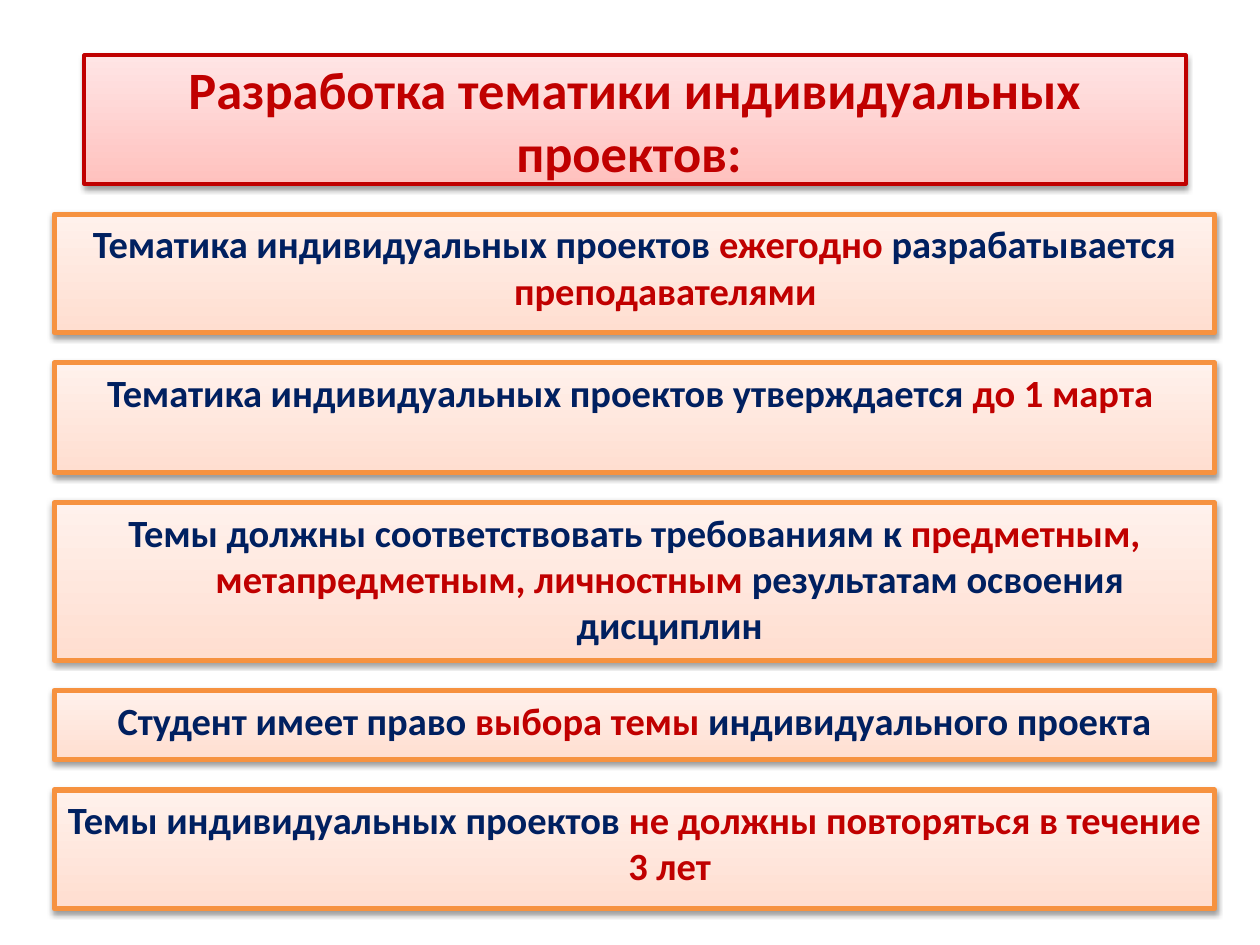
"""Build a slide of framed rules on choosing topics for individual projects."""

from dataclasses import dataclass

import lxml.etree
import pptx
import pptx.dml.color
import pptx.enum.shapes
import pptx.enum.text
import pptx.oxml
import pptx.oxml.ns
import pptx.shapes.autoshape
import pptx.slide
import pptx.util

RGBColor = pptx.dml.color.RGBColor
RED = RGBColor(0xC0, 0x00, 0x00)
NAVY = RGBColor(0x00, 0x20, 0x60)
ORANGE = RGBColor(0xF6, 0x92, 0x40)
PINK_DARK = RGBColor(0xFF, 0xC1, 0xBE)
PINK_LIGHT = RGBColor(0xFF, 0xE5, 0xE5)
PEACH_DARK = RGBColor(0xFF, 0xDE, 0xD0)
PEACH_LIGHT = RGBColor(0xFF, 0xF1, 0xEC)

SLIDE_WIDTH = pptx.util.Inches(10)
SLIDE_HEIGHT = pptx.util.Inches(7.5)
COLUMN = SLIDE_WIDTH / 100
ROW = SLIDE_HEIGHT / 75
FIRST_RULE_TOP = 17
RULE_GAP = 2.4
HANGING_INDENT = pptx.util.Inches(0.56)


@dataclass(frozen=True)
class BoxStyle:
    """Look and horizontal place of one kind of box."""

    left: float
    width: float
    bottom_color: RGBColor
    top_color: RGBColor
    line_color: RGBColor
    line_points: float
    text_points: float
    anchor: pptx.enum.text.MSO_ANCHOR
    hanging: bool


@dataclass(frozen=True)
class Rule:
    """Height in rows and the coloured text pieces of a rule."""

    height: float
    pieces: tuple[tuple[str, RGBColor], ...]


TITLE_STYLE = BoxStyle(6.7, 87.4, PINK_DARK, PINK_LIGHT, RED, 2.25, 30,
                       pptx.enum.text.MSO_ANCHOR.MIDDLE, False)
RULE_STYLE = BoxStyle(4.3, 92.1, PEACH_DARK, PEACH_LIGHT, ORANGE, 3, 22,
                      pptx.enum.text.MSO_ANCHOR.TOP, True)
TITLE = Rule(10.2, (("Разработка тематики индивидуальных проектов: ", RED),))
RULES = (
    Rule(9.4, (("Тематика индивидуальных проектов ", NAVY), ("ежегодно ", RED),
               ("разрабатывается ", NAVY), ("преподавателями ", RED))),
    Rule(8.7, (("Тематика индивидуальных проектов утверждается", NAVY),
               (" до 1 марта ", RED))),
    Rule(12.5, (("Темы должны соответствовать требованиям к ", NAVY),
                ("предметным, метапредметным, личностным", RED),
                (" результатам освоения дисциплин", NAVY))),
    Rule(5.5, (("Студент имеет право ", NAVY), ("выбора темы ", RED),
               ("индивидуального проекта", NAVY))),
    Rule(9.4, (("Темы индивидуальных проектов ", NAVY),
               ("не должны повторяться в течение 3 лет", RED))),
)


def add_shadow(shape: pptx.shapes.autoshape.Shape) -> None:
    """Give the shape a soft shadow falling straight down."""
    shape.shadow.inherit = False
    effects = shape.element.spPr.find(pptx.oxml.ns.qn("a:effectLst"))
    shadow = lxml.etree.SubElement(
        effects, pptx.oxml.ns.qn("a:outerShdw"),
        blurRad=str(pptx.util.Pt(3.1)), dist=str(pptx.util.Pt(1.6)),
        dir="5400000", rotWithShape="0")
    color = lxml.etree.SubElement(shadow, pptx.oxml.ns.qn("a:srgbClr"), val="000000")
    lxml.etree.SubElement(color, pptx.oxml.ns.qn("a:alpha"), val="38000")


def add_box(slide: pptx.slide.Slide, top: float, rule: Rule, style: BoxStyle) -> None:
    """Draw one gradient box with its text."""
    shape = slide.shapes.add_shape(
        pptx.enum.shapes.MSO_SHAPE.RECTANGLE,
        round(style.left * COLUMN), round(top * ROW),
        round(style.width * COLUMN), round(rule.height * ROW))
    shape.fill.gradient()
    shape.fill.gradient_angle = 90
    for stop, color in zip(shape.fill.gradient_stops, (style.bottom_color, style.top_color)):
        stop.color.rgb = color
    shape.line.color.rgb = style.line_color
    shape.line.width = pptx.util.Pt(style.line_points)
    add_shadow(shape)

    text_frame = shape.text_frame
    text_frame.word_wrap = True
    text_frame.vertical_anchor = style.anchor
    paragraph = text_frame.paragraphs[0]
    paragraph.alignment = pptx.enum.text.PP_ALIGN.CENTER
    if style.hanging:
        properties = paragraph._p.get_or_add_pPr()
        properties.set("marL", str(HANGING_INDENT))
        properties.set("indent", str(-HANGING_INDENT))
        tabs = lxml.etree.SubElement(properties, pptx.oxml.ns.qn("a:tabLst"))
        lxml.etree.SubElement(tabs, pptx.oxml.ns.qn("a:tab"), pos="0", algn="l")
    for text, color in rule.pieces:
        run = paragraph.add_run()
        run.text = text
        run.font.name = "Calibri"
        run.font.size = pptx.util.Pt(style.text_points)
        run.font.bold = True
        run.font.color.rgb = color


def main() -> None:
    """Build and save the presentation."""
    presentation = pptx.Presentation()
    presentation.slide_width = SLIDE_WIDTH
    presentation.slide_height = SLIDE_HEIGHT
    slide = presentation.slides.add_slide(presentation.slide_layouts[6])
    add_box(slide, 4.4, TITLE, TITLE_STYLE)
    top = FIRST_RULE_TOP
    for rule in RULES:
        add_box(slide, top, rule, RULE_STYLE)
        top += rule.height + RULE_GAP
    presentation.save("out.pptx")


if __name__ == "__main__":
    main()
